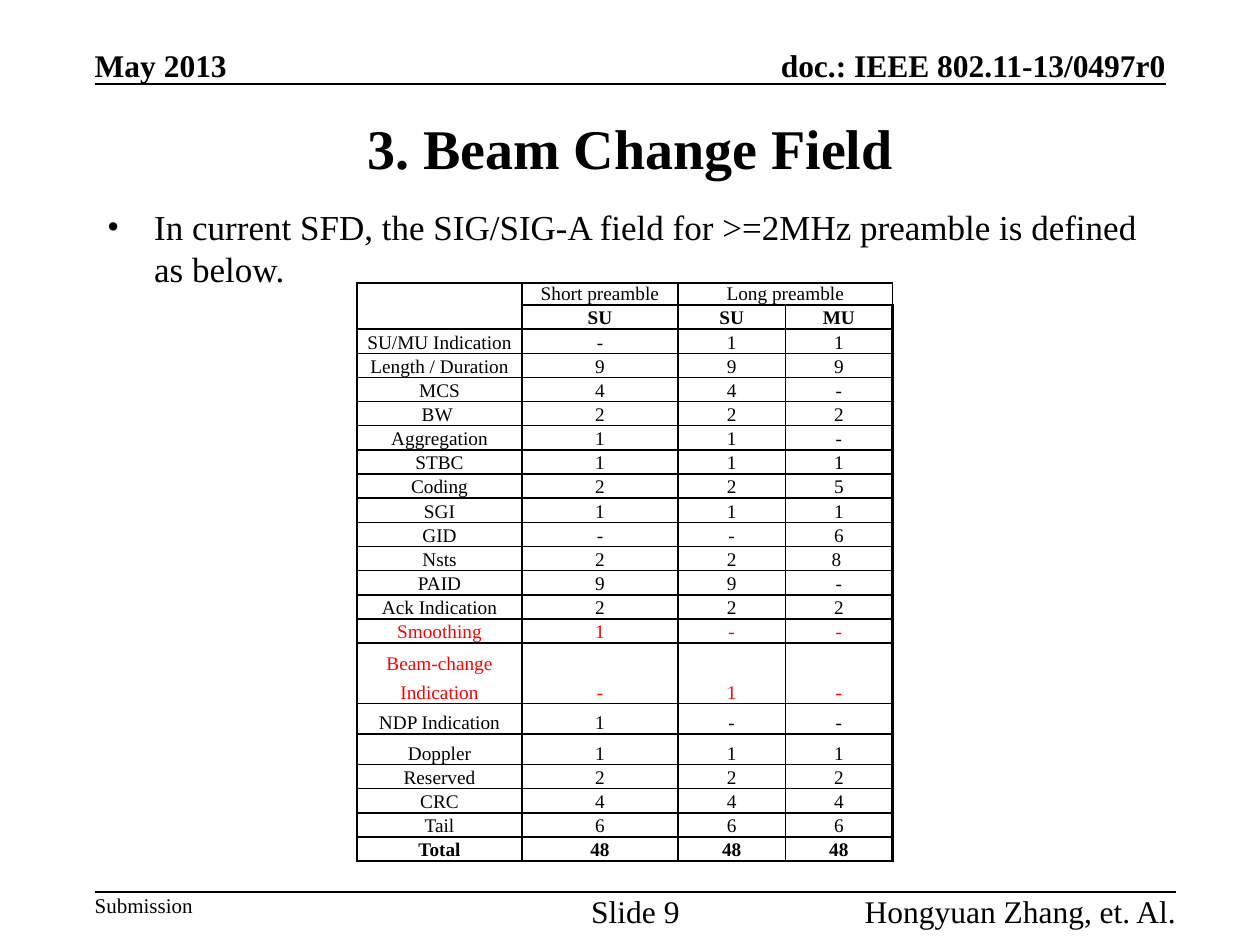
from lxml.etree import SubElement
from pptx import Presentation
from pptx.dml.color import RGBColor
from pptx.enum.shapes import MSO_CONNECTOR
from pptx.enum.text import MSO_ANCHOR, MSO_AUTO_SIZE, PP_ALIGN
from pptx.oxml.ns import qn
from pptx.util import Cm, Pt

FONT = "Times New Roman"
BLACK, RED = "000000", "FF0000"
LINE_HEIGHT, TALL_LINE = 0.47, 0.61
COLUMN_WIDTHS = [3.32, 3.15, 2.16, 2.16]
HEADINGS = [["", "Short preamble", "Long preamble", ""], ["", "SU", "SU", "MU"]]
FIELDS = [
    ["SU/MU Indication", "-", "1", "1"],
    ["Length / Duration", "9", "9", "9"],
    ["MCS", "4", "4", "-"],
    ["BW ", "2", "2", "2"],
    ["Aggregation", "1", "1", "-"],
    ["STBC", "1", "1", "1"],
    ["Coding", "2", "2", "5"],
    ["SGI", "1", "1", "1"],
    ["GID", "-", "-", "6"],
    ["Nsts", "2", "2", "8 "],
    ["PAID", "9", "9", "-"],
    ["Ack Indication", "2", "2", "2"],
    ["Smoothing", "1", "-", "-"],
    ["Beam-change Indication", "-", "1", "-"],
    ["NDP Indication", "1", "-", "-"],
    ["Doppler", "1", "1", "1"],
    ["Reserved", "2", "2", "2"],
    ["CRC", "4", "4", "4"],
    ["Tail", "6", "6", "6"],
    ["Total", "48", "48", "48"],
]
ROW_HEIGHTS = {"Short preamble": 0.43, "Beam-change Indication": 2 * TALL_LINE,
               "NDP Indication": TALL_LINE, "Doppler": TALL_LINE}
RED_FIELDS = {"Smoothing", "Beam-change Indication"}
TALL_FIELDS = {"Beam-change Indication", "NDP Indication", "Doppler"}


def color(hex_code):
    return RGBColor.from_string(hex_code)


def style(paragraph, size, bold=False, align=PP_ALIGN.LEFT, hex_code=BLACK):
    paragraph.alignment = align
    font = paragraph.font
    font.name, font.size, font.bold = FONT, Pt(size), bold
    font.color.rgb = color(hex_code)


def add_label(slide, box, text, size, bold=False, align=PP_ALIGN.LEFT,
              anchor=MSO_ANCHOR.TOP):
    """Add one unwrapped line of text without margins."""
    frame = slide.shapes.add_textbox(*map(Cm, box)).text_frame
    frame.margin_left = frame.margin_right = frame.margin_top = frame.margin_bottom = 0
    frame.word_wrap = False
    frame.vertical_anchor = anchor
    frame.text = text
    style(frame.paragraphs[0], size, bold, align)


def add_rule(slide, left, top, width):
    rule = slide.shapes.add_connector(
        MSO_CONNECTOR.STRAIGHT, Cm(left), Cm(top), Cm(left + width), Cm(top))
    rule.line.color.rgb = color(BLACK)
    rule.line.width = Pt(1)
    SubElement(rule._element.spPr, qn("a:effectLst"))


def add_header(slide, left, top, width, height):
    half = width / 2
    add_label(slide, (left, top, half, height), "May 2013", 18, True,
              anchor=MSO_ANCHOR.BOTTOM)
    add_label(slide, (left + half, top, half, height), "doc.: IEEE 802.11-13/0497r0",
              18, True, PP_ALIGN.RIGHT, MSO_ANCHOR.BOTTOM)
    add_rule(slide, left, top + height, width)


def add_footer(slide, left, top, width, height):
    add_rule(slide, left, top, width)
    add_label(slide, (left, top, 2, height), "Submission", 12)
    add_label(slide, (left + 10, top, 1.8, height), "Slide 9", 18,
              align=PP_ALIGN.CENTER)
    add_label(slide, (left + width - 6.3, top, 6.3, height), "Hongyuan Zhang, et. Al.",
              18, align=PP_ALIGN.RIGHT)


def set_title(slide, left, top, width, height):
    title = slide.shapes.title
    title.left, title.top, title.width, title.height = map(Cm, (left, top, width, height))
    title.text_frame.text = "3. Beam Change Field"
    title.text_frame.auto_size = MSO_AUTO_SIZE.NONE
    title.text_frame.vertical_anchor = MSO_ANCHOR.MIDDLE
    style(title.text_frame.paragraphs[0], 32, True, PP_ALIGN.CENTER)


def add_bullet(slide, left, top, width, height):
    frame = slide.shapes.add_textbox(*map(Cm, (left, top, width, height))).text_frame
    frame.word_wrap = True
    frame.text = ("In current SFD, the SIG/SIG-A field for >=2MHz preamble "
                  "is defined as below.")
    paragraph = frame.paragraphs[0]
    properties = paragraph._p.get_or_add_pPr()
    properties.set("marL", str(Cm(0.95)))
    properties.set("indent", str(-Cm(0.95)))
    SubElement(properties, qn("a:buFont"), typeface=FONT)
    SubElement(properties, qn("a:buChar"), char="•")
    style(paragraph, 20)


def set_borders(cell, widths):
    properties = cell._tc.get_or_add_tcPr()
    for position, (side, width) in enumerate(widths.items()):
        line = SubElement(properties, qn(f"a:{side}"), w=str(Pt(width)))
        fill = SubElement(line, qn("a:solidFill"))
        SubElement(fill, qn("a:srgbClr"), val=BLACK)
        properties.insert(position, line)


def fill_cell(cell, text, field, is_heading):
    cell.fill.background()
    cell.margin_left = cell.margin_right = cell.margin_top = Cm(0.02)
    cell.margin_bottom = 0
    cell.vertical_anchor = MSO_ANCHOR.BOTTOM
    cell.text = text
    paragraph = cell.text_frame.paragraphs[0]
    bold = text in ("SU", "MU") or field == "Total"
    style(paragraph, 11, bold, PP_ALIGN.CENTER, RED if field in RED_FIELDS else BLACK)
    if field in TALL_FIELDS:
        paragraph.line_spacing = Pt(16.8)
    elif is_heading and not bold:
        paragraph.line_spacing = Pt(11.8)


def add_field_table(slide, left, top):
    rows = HEADINGS + FIELDS
    heights = [ROW_HEIGHTS.get(row[0] or row[1], LINE_HEIGHT) for row in rows]
    last_row, last_column = len(rows) - 1, len(COLUMN_WIDTHS) - 1
    table = slide.shapes.add_table(
        len(rows), len(COLUMN_WIDTHS), Cm(left), Cm(top),
        Cm(sum(COLUMN_WIDTHS)), Cm(sum(heights))).table
    table.first_row = table.horz_banding = False
    for column, width in zip(table.columns, COLUMN_WIDTHS):
        column.width = Cm(width)
    for r, (row, height) in enumerate(zip(rows, heights)):
        table.rows[r].height = Cm(height)
        for c, text in enumerate(row):
            cell = table.cell(r, c)
            fill_cell(cell, text, row[0], r < len(HEADINGS))
            set_borders(cell, {
                "lnL": 1.5 if c == 0 else 1, "lnR": 1.5 if c == last_column else 1,
                "lnT": 1.5 if r == 0 else 1, "lnB": 1.5 if r == last_row else 1})
    table.cell(0, 0).merge(table.cell(1, 0))
    table.cell(0, 2).merge(table.cell(0, 3))


def main():
    presentation = Presentation()
    presentation.slide_width, presentation.slide_height = Cm(25.4), Cm(19.05)
    slide = presentation.slides.add_slide(presentation.slide_layouts[5])
    add_header(slide, 1.91, 0.93, 21.59, 0.77)
    set_title(slide, 1.91, 1.91, 21.59, 2.12)
    add_bullet(slide, 1.91, 4.02, 21.59, 1.69)
    add_field_table(slide, 7.2, 5.71)
    add_footer(slide, 1.91, 17.99, 21.8, 0.77)
    presentation.save("out.pptx")


if __name__ == "__main__":
    main()
